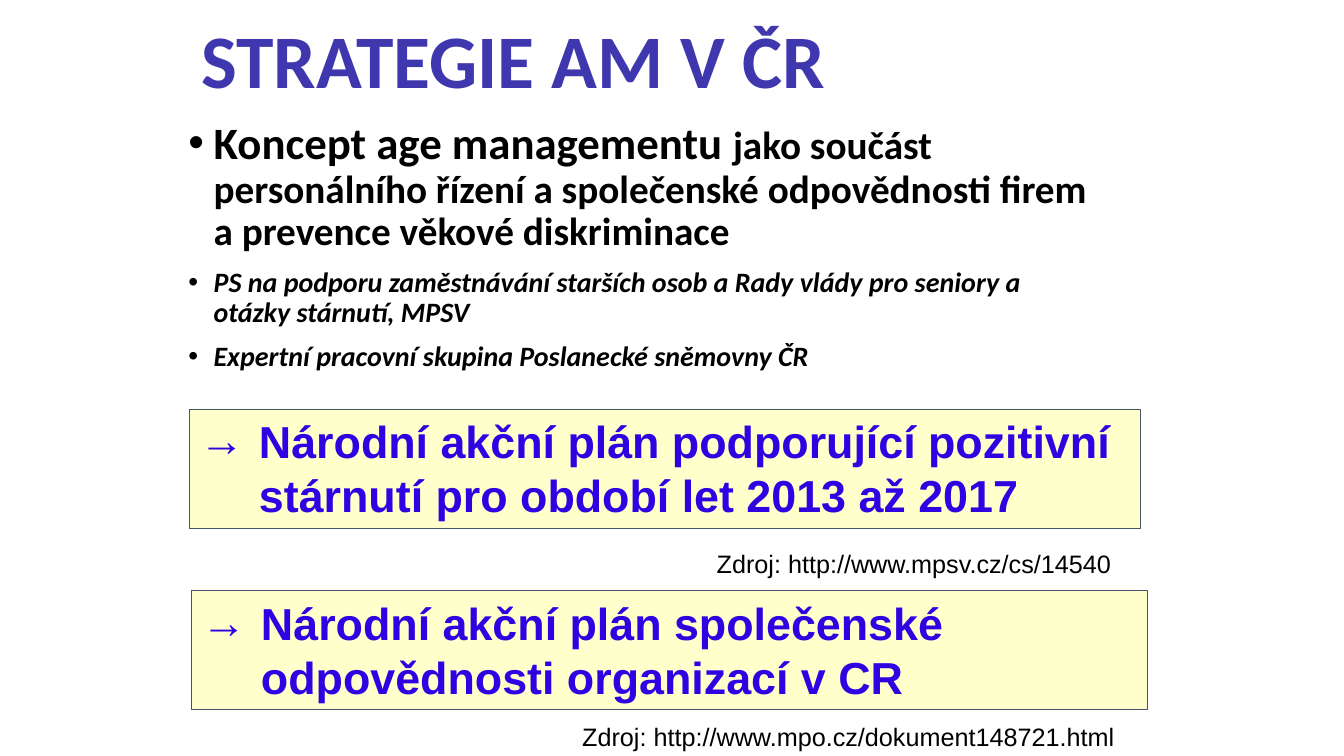
from lxml.etree import SubElement
from pptx import Presentation
from pptx.dml.color import RGBColor
from pptx.enum.shapes import MSO_SHAPE
from pptx.enum.text import MSO_ANCHOR, PP_ALIGN
from pptx.oxml.ns import qn
from pptx.util import Inches, Pt

BLACK = RGBColor(0x00, 0x00, 0x00)
VIOLET = RGBColor(0x3F, 0x37, 0xAD)
BLUE = RGBColor(0x2D, 0x03, 0xE1)
CREAM = RGBColor(0xFF, 0xFF, 0xCC)
SLATE = RGBColor(0x44, 0x54, 0x6A)

# Content: each paragraph is a list of (text, size, italic) runs
TITLE = [[("STRATEGIE AM V ČR", 54, False)]]
CONCEPT = [
    [("Koncept age managementu ", 32, False),
     ("jako součást personálního řízení a společenské odpovědnosti firem "
      "a prevence věkové diskriminace", 28, False)],
    [("PS na podporu zaměstnávání starších osob a Rady vlády pro seniory a "
      "otázky stárnutí, MPSV", 20, True)],
    [("Expertní pracovní skupina Poslanecké sněmovny ČR", 20, True)],
]
# Action plans: (text, box) and their sources, box = left, top, width, height
PLANS = [
    ("Národní akční plán podporující pozitivní stárnutí pro období let 2013 až 2017",
     (1.88, 4.06, 9.43, 1.18)),
    ("Národní akční plán společenské odpovědnosti organizací v CR",
     (1.9, 5.86, 9.48, 1.18)),
]
SOURCES = [
    ("Zdroj: http://www.mpsv.cz/cs/14540", (6.86, 5.39, 4.41, 0.4)),
    ("Zdroj: http://www.mpo.cz/dokument148721.html", (5.51, 7.11, 5.81, 0.4)),
]


def add_bullet(paragraph, character, indent):
    properties = paragraph._p.get_or_add_pPr()
    properties.set("marL", str(Inches(indent)))
    properties.set("indent", str(-Inches(indent)))
    SubElement(properties, qn("a:buFont")).set("typeface", "Arial")
    SubElement(properties, qn("a:buChar")).set("char", character)


def write_text(shape, paragraphs, font="Arial", color=BLACK, bold=False,
               align=PP_ALIGN.LEFT, anchor=MSO_ANCHOR.TOP, spacing=1.0,
               before=0, bullet=None, indent=0):
    frame = shape.text_frame
    frame.word_wrap = True
    frame.vertical_anchor = anchor
    for index, runs in enumerate(paragraphs):
        paragraph = frame.add_paragraph() if index else frame.paragraphs[0]
        if bullet:
            add_bullet(paragraph, bullet, indent)
        paragraph.alignment = align
        paragraph.line_spacing = spacing
        paragraph.space_before = Pt(before if index else 0)
        for text, size, italic in runs:
            run = paragraph.add_run()
            run.text = text
            run.font.name = font
            run.font.size = Pt(size)
            run.font.bold = bold
            run.font.italic = italic
            run.font.color.rgb = color


presentation = Presentation()
presentation.slide_width = Inches(13.33)
presentation.slide_height = Inches(7.5)
slide = presentation.slides.add_slide(presentation.slide_layouts[6])


def add_text(box, paragraphs, **text_format):
    shape = slide.shapes.add_textbox(*map(Inches, box))
    write_text(shape, paragraphs, **text_format)


# Heading and concept
add_text((1.9, 0.21, 9.37, 0.85), TITLE, font="Calibri", color=VIOLET,
         bold=True, anchor=MSO_ANCHOR.MIDDLE, spacing=0.9)
add_text((1.77, 1.15, 9.22, 2.62), CONCEPT, font="Calibri", bold=True,
         spacing=0.9, before=10, bullet="•", indent=0.25)

# Action plans
for text, box in PLANS:
    panel = slide.shapes.add_shape(MSO_SHAPE.RECTANGLE, *map(Inches, box))
    panel.shadow.inherit = False
    panel.fill.solid()
    panel.fill.fore_color.rgb = CREAM
    panel.line.color.rgb = SLATE
    panel.line.width = Pt(0.75)
    write_text(panel, [[(text, 32, False)]], color=BLUE, bold=True,
               bullet="→", indent=0.59)

# Sources
for text, box in SOURCES:
    add_text(box, [[(text, 18, False)]], align=PP_ALIGN.CENTER)

presentation.save("out.pptx")
